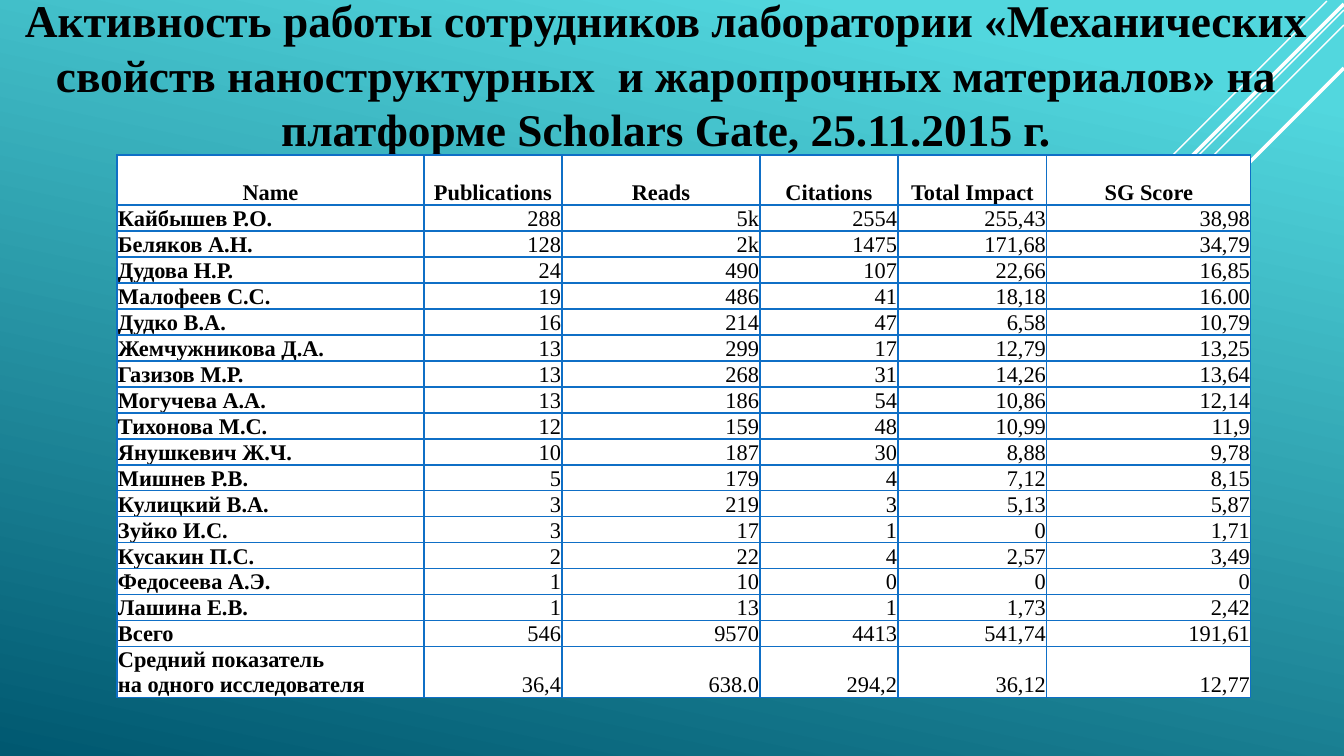
import pptx
import pptx.dml.color
import pptx.enum.shapes
import pptx.enum.text
import pptx.oxml
import pptx.oxml.ns
import pptx.util

SCALE = 12192000 / 1344
FONT = "Times New Roman"
BLACK = pptx.dml.color.RGBColor(0x00, 0x00, 0x00)
WHITE = pptx.dml.color.RGBColor(0xFF, 0xFF, 0xFF)
BORDER_BLUE = pptx.dml.color.RGBColor(0x0F, 0x6F, 0xC6)
LIGHT_TEAL = pptx.dml.color.RGBColor(0x52, 0xD7, 0xDE)
DARK_TEAL = pptx.dml.color.RGBColor(0x00, 0x58, 0x70)

LEFT = pptx.enum.text.PP_ALIGN.LEFT
CENTER = pptx.enum.text.PP_ALIGN.CENTER
RIGHT = pptx.enum.text.PP_ALIGN.RIGHT

NAMESPACE = pptx.oxml.ns.nsdecls("a")
TITLE = (
    "Активность работы сотрудников лаборатории «Механических свойств "
    "наноструктурных  и жаропрочных материалов» на платформе "
    "Scholars Gate, 25.11.2015 г."
)
DIAGONALS = [
    (1327, 1, 420, 1),
    (1344, 10, 670, 1),
    (1344, 25, 546, 1),
    (1344, 4, 535, 2.5),
    (1344, 68, 479, 2.5),
]
COLUMN_WIDTHS = [307, 138, 198, 138, 149, 204]
HEADER_HEIGHT = 50
ROW_HEIGHT = 26
ROWS = [
    ("Name", "Publications", "Reads", "Citations", "Total Impact", "SG Score"),
    ("Кайбышев Р.О.", "288", "5k", "2554", "255,43", "38,98"),
    ("Беляков А.Н.", "128", "2k", "1475", "171,68", "34,79"),
    ("Дудова Н.Р.", "24", "490", "107", "22,66", "16,85"),
    ("Малофеев С.С.", "19", "486", "41", "18,18", "16.00"),
    ("Дудко В.А.", "16", "214", "47", "6,58", "10,79"),
    ("Жемчужникова Д.А.", "13", "299", "17", "12,79", "13,25"),
    ("Газизов М.Р.", "13", "268", "31", "14,26", "13,64"),
    ("Могучева А.А.", "13", "186", "54", "10,86", "12,14"),
    ("Тихонова М.С.", "12", "159", "48", "10,99", "11,9"),
    ("Янушкевич Ж.Ч.", "10", "187", "30", "8,88", "9,78"),
    ("Мишнев Р.B.", "5", "179", "4", "7,12", "8,15"),
    ("Кулицкий В.А.", "3", "219", "3", "5,13", "5,87"),
    ("Зуйко И.С.", "3", "17", "1", "0", "1,71"),
    ("Кусакин П.С.", "2", "22", "4", "2,57", "3,49"),
    ("Федосеева А.Э.", "1", "10", "0", "0", "0"),
    ("Лашина Е.В.", "1", "13", "1", "1,73", "2,42"),
    ("Всего", "546", "9570", "4413", "541,74", "191,61"),
    ("Средний показатель\nна одного исследователя",
     "36,4", "638.0", "294,2", "36,12", "12,77"),
]


def px(length):
    """Turn a length in px into EMU."""
    return pptx.util.Emu(round(length * SCALE))


def write_paragraph(paragraph, text, size, bold, alignment):
    """Write one black run into a paragraph."""
    paragraph.alignment = alignment
    run = paragraph.add_run()
    run.text = text
    run.font.name = FONT
    run.font.size = pptx.util.Pt(size)
    run.font.bold = bold
    run.font.color.rgb = BLACK


def paint_background(slide):
    """Fill the slide with the slanted teal gradient."""
    fill = slide.background.fill
    fill.gradient()
    fill.gradient_angle = 258
    stops = zip(fill.gradient_stops, (0.1, 1), (LIGHT_TEAL, DARK_TEAL))
    for stop, position, color in stops:
        stop.position = position
        stop.color.rgb = color


def add_diagonals(slide):
    """Draw the white 45-degree lines that run in from the top right."""
    for x, y, run_length, width in DIAGONALS:
        line = slide.shapes.add_connector(
            pptx.enum.shapes.MSO_CONNECTOR.STRAIGHT,
            px(x), px(y), px(x - run_length), px(y + run_length))
        line.line.color.rgb = WHITE
        line.line.width = pptx.util.Pt(width)
        line.element.spPr.append(
            pptx.oxml.parse_xml(f"<a:effectLst {NAMESPACE}/>"))


def place_title(slide, left, top, width, height):
    """Place the title in its box, in front of the lines."""
    title = slide.shapes.title
    title.left, title.top = px(left), px(top)
    title.width, title.height = px(width), px(height)
    frame = title.text_frame
    frame.word_wrap = True
    frame.auto_size = pptx.enum.text.MSO_AUTO_SIZE.NONE
    frame.vertical_anchor = pptx.enum.text.MSO_ANCHOR.BOTTOM
    write_paragraph(frame.paragraphs[0], TITLE, 32.4, True, CENTER)
    title.element.getparent().append(title.element)


def add_borders(cell):
    """Draw a thin blue line on all four sides of a cell."""
    properties = cell._tc.get_or_add_tcPr()
    for index, side in enumerate(("lnL", "lnR", "lnT", "lnB")):
        properties.insert(index, pptx.oxml.parse_xml(
            f'<a:{side} {NAMESPACE} w="12700"><a:solidFill>'
            f'<a:srgbClr val="{BORDER_BLUE}"/></a:solidFill></a:{side}>'))


def format_cell(cell, text, bold, alignment):
    """Fill a cell with white, frame it and write its lines of text."""
    cell.fill.solid()
    cell.fill.fore_color.rgb = WHITE
    add_borders(cell)
    cell.vertical_anchor = pptx.enum.text.MSO_ANCHOR.BOTTOM
    cell.margin_left = cell.margin_right = cell.margin_top = px(1)
    cell.margin_bottom = 0
    frame = cell.text_frame
    for index, line in enumerate(text.split("\n")):
        paragraph = frame.add_paragraph() if index else frame.paragraphs[0]
        write_paragraph(paragraph, line, 16, bold, alignment)


def add_activity_table(slide, left, top):
    """Add the table of staff activity with its top left corner as given."""
    heights = [HEADER_HEIGHT] + [ROW_HEIGHT] * (len(ROWS) - 1)
    table = slide.shapes.add_table(
        len(ROWS), len(COLUMN_WIDTHS), px(left), px(top),
        px(sum(COLUMN_WIDTHS)), px(sum(heights))).table
    table.first_row = table.horz_banding = False
    for column, width in zip(table.columns, COLUMN_WIDTHS):
        column.width = px(width)
    for row_index, values in enumerate(ROWS):
        table.rows[row_index].height = px(heights[row_index])
        for column_index, text in enumerate(values):
            is_header = row_index == 0
            is_name = column_index == 0
            alignment = CENTER if is_header else LEFT if is_name else RIGHT
            format_cell(table.cell(row_index, column_index), text,
                        is_header or is_name, alignment)


def main():
    """Build the slide and save it."""
    presentation = pptx.Presentation()
    presentation.slide_width = px(1344)
    presentation.slide_height = px(756)
    slide = presentation.slides.add_slide(presentation.slide_layouts[5])
    paint_background(slide)
    add_diagonals(slide)
    place_title(slide, 8, -34, 1316, 195)
    add_activity_table(slide, 117, 155)
    presentation.save("out.pptx")


if __name__ == "__main__":
    main()
